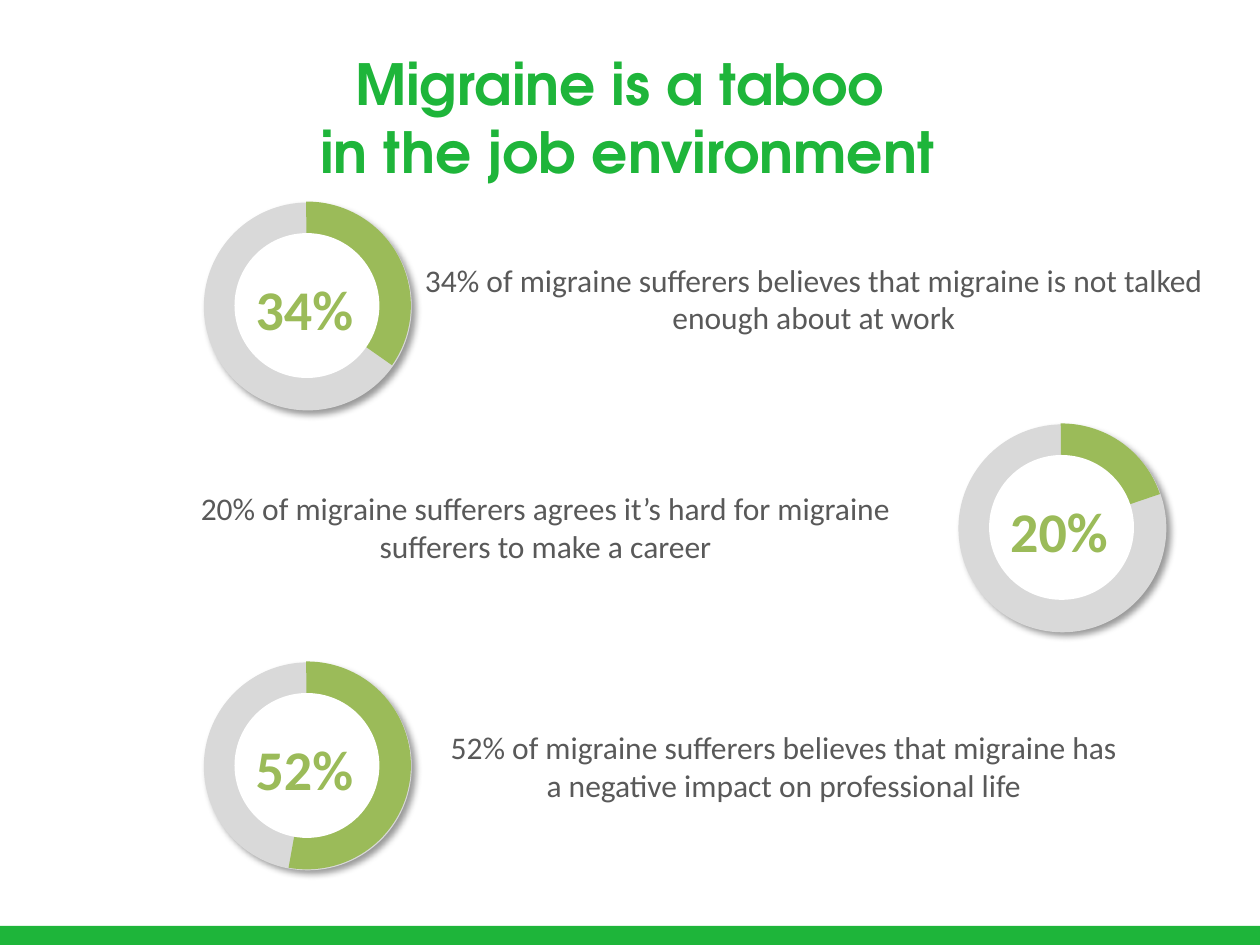
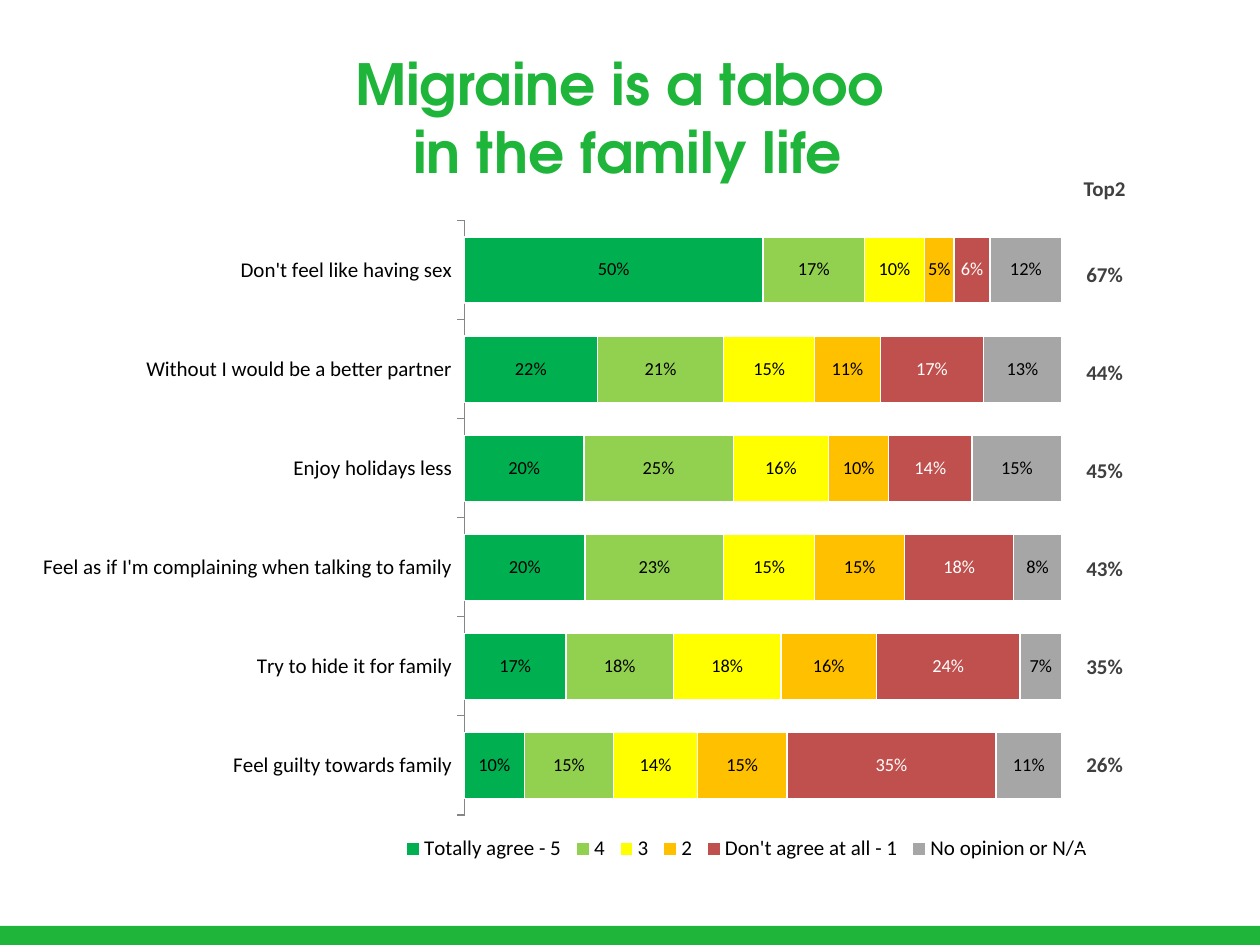
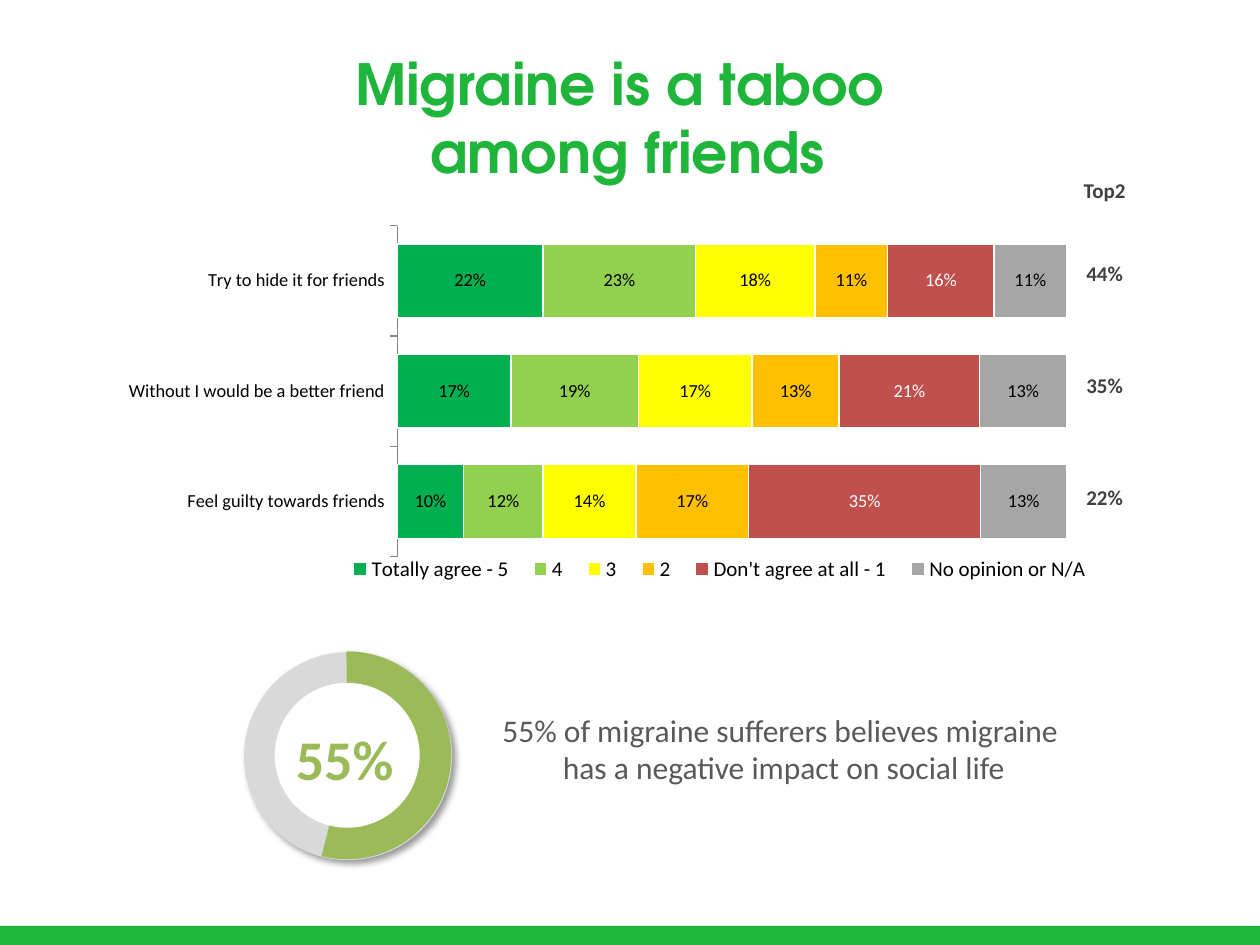
from dataclasses import dataclass

from pptx import Presentation
from pptx.chart import data as cd
from pptx.dml.color import RGBColor
from pptx.enum import chart as ce, shapes as sh, text as tx
from pptx.oxml import ns, parse_xml
from pptx.util import Pt

GREEN = RGBColor(0x1E, 0xB5, 0x3A)
OLIVE = RGBColor(0x9B, 0xBB, 0x59)
SILVER = RGBColor(0xD9, 0xD9, 0xD9)
AXIS = RGBColor(0x86, 0x86, 0x86)
GREY = RGBColor(0x59, 0x59, 0x59)
DARK = RGBColor(0x40, 0x40, 0x40)
BLACK = RGBColor(0, 0, 0)
WHITE = RGBColor(0xFF, 0xFF, 0xFF)

HEAD = "TeX Gyre Adventor"
BODY = "Calibri"
PRESET = sh.MSO_SHAPE
RING = 118.8  # outer diameter
HOLE = 82.8
THICK = 0.17
TOP_ARC = 162.25  # arc end at twelve o'clock

# Answer, bar colour, label colour
SCALE = [
    ("Totally agree - 5", RGBColor(0x00, 0xB0, 0x50), BLACK),
    ("4", RGBColor(0x92, 0xD0, 0x50), BLACK),
    ("3", RGBColor(0xFF, 0xFF, 0x00), BLACK),
    ("2", RGBColor(0xFF, 0xC0, 0x00), BLACK),
    ("Don't agree at all - 1", RGBColor(0xC0, 0x50, 0x4D), WHITE),
    ("No opinion or N/A", RGBColor(0xA6, 0xA6, 0xA6), BLACK),
]
PLOT = (0.42, 0.03, 0.54, 0.88)


@dataclass
class Box:
    left: float
    top: float
    width: float
    height: float

    def emu(self) -> tuple:
        return Pt(self.left), Pt(self.top), Pt(self.width), Pt(self.height)


@dataclass
class Fact:
    """A ring with its share, and the sentence beside it."""
    left: float
    top: float
    share: str
    start: float
    claim: str
    side: float
    line: float


@dataclass
class Survey:
    """Stacked bars; rows maps each question to its percentages."""
    box: Box
    rows: dict
    size: float
    legend: tuple


@dataclass
class Totals:
    """The Top2 column: a heading, then cells of equal height."""
    top: float
    first: float
    pitch: float
    anchor: tx.MSO_ANCHOR
    cells: list


def style(para, size: float, color: RGBColor, bold: bool = False, name: str = BODY) -> None:
    para.alignment = tx.PP_ALIGN.CENTER
    for run in para.runs:
        font = run.font
        font.size, font.bold, font.name = Pt(size), bold, name
        font.color.rgb = color


def write(shapes, box: Box, words: str, size: float, color: RGBColor,
          bold: bool = False, name: str = BODY):
    frame = shapes.add_textbox(*box.emu()).text_frame
    frame.word_wrap = True
    frame.text = words
    style(frame.paragraphs[0], size, color, bold, name)
    return frame


def solid(shapes, kind, box: Box, color: RGBColor, adjust: tuple = ()):
    shape = shapes.add_shape(kind, *box.emu())
    shape.shadow.inherit = False
    shape.fill.solid()
    shape.fill.fore_color.rgb = color
    shape.line.fill.background()
    for i, value in enumerate(adjust):
        shape.adjustments[i] = value
    return shape


def cast(shape) -> None:
    """Give the shape a soft shadow to its lower right."""
    glow = shape._element.spPr.find(ns.qn("a:effectLst"))
    glow.append(parse_xml(
        f'<a:outerShdw {ns.nsdecls("a")} blurRad="{Pt(4)}" dist="{Pt(3)}" dir="2700000" '
        'algn="tl" rotWithShape="0"><a:srgbClr val="000000"><a:alpha val="40000"/>'
        '</a:srgbClr></a:outerShdw>'))


def start(deck, title: str):
    slide = deck.slides.add_slide(deck.slide_layouts[6])
    solid(slide.shapes, PRESET.RECTANGLE, Box(-3, 529, 726, 13), GREEN)
    frame = write(slide.shapes, Box(102, 21.6, 513, 90), title, 32.4, GREEN, True, HEAD)
    frame.vertical_anchor = tx.MSO_ANCHOR.MIDDLE
    return slide


def show(slide, fact: Fact) -> None:
    x, y = fact.left, fact.top
    shapes = slide.shapes.add_group_shape().shapes
    base = solid(shapes, PRESET.DONUT, Box(x + 0.5, y + 0.5, RING, RING), SILVER, (THICK,))
    cast(base)
    arc = solid(shapes, PRESET.BLOCK_ARC, Box(x, y, RING, RING), OLIVE,
                (fact.start, TOP_ARC, THICK))
    for part in (base, arc):
        part._element.spPr.xfrm.set("flipH", "1")
    edge = (RING - HOLE) / 2
    solid(shapes, PRESET.OVAL, Box(x + edge, y + edge, HOLE, HOLE), WHITE)
    frame = write(shapes, Box(x + 22.3, y + 41.6, 71.3, 38), fact.share, 32, OLIVE, True)
    frame.margin_left = frame.margin_right = frame.margin_top = frame.margin_bottom = 0
    write(slide.shapes, Box(fact.side, fact.line, 459.4, 51), fact.claim, 18, GREY)


def layout(spot: tuple, inner: bool = False):
    target = '<c:layoutTarget val="inner"/>' if inner else ""
    modes = "".join(f'<c:{k}Mode val="edge"/>' for k in "xy")
    sizes = "".join(f'<c:{k} val="{v}"/>' for k, v in zip("xywh", spot))
    return parse_xml(f'<c:layout {ns.nsdecls("c")}><c:manualLayout>{target}{modes}{sizes}'
                     '</c:manualLayout></c:layout>')


def plot(slide, survey: Survey) -> None:
    data = cd.CategoryChartData(number_format="0%")
    data.categories = list(survey.rows)
    for (name, _, _), column in zip(SCALE, zip(*survey.rows.values())):
        data.add_series(name, [value / 100 for value in column])
    chart = slide.shapes.add_chart(ce.XL_CHART_TYPE.BAR_STACKED_100,
                                   *survey.box.emu(), data).chart
    chart.font.size, chart.font.name = Pt(18), BODY
    chart.font.color.rgb = BLACK
    chart.has_title = False

    bars = chart.plots[0]
    bars.gap_width, bars.overlap, bars.vary_by_categories = 50, 100, False
    for series, (_, color, ink) in zip(bars.series, SCALE):
        series.format.fill.solid()
        series.format.fill.fore_color.rgb = color
        series.format.line.color.rgb = WHITE
        series.format.line.width = Pt(0.75)
        tags = series.data_labels
        tags.show_value = True
        tags.position = ce.XL_LABEL_POSITION.CENTER
        tags.number_format, tags.number_format_is_linked = "0%", False
        tags.font.size, tags.font.name = Pt(10.5), BODY
        tags.font.color.rgb = ink

    asks = chart.category_axis
    asks.reverse_order = True
    asks.major_tick_mark = ce.XL_TICK_MARK.OUTSIDE
    asks.tick_labels.font.size = Pt(survey.size)
    asks.format.line.color.rgb = AXIS
    scale = chart.value_axis
    scale.visible = scale.has_major_gridlines = False
    scale.minimum_scale, scale.maximum_scale, scale.major_unit = 0, 1, 0.1

    chart.has_legend = True
    legend = chart.legend
    legend.position = ce.XL_LEGEND_POSITION.RIGHT
    legend.include_in_layout = False
    legend.font.size = Pt(12)
    legend._element.find(ns.qn("c:legendPos")).addnext(layout(survey.legend))
    area = chart._chartSpace.chart.plotArea
    for old in area.findall(ns.qn("c:layout")):
        area.remove(old)
    area.insert(0, layout(PLOT, True))


def total(slide, sums: Totals) -> None:
    words = ["Top2", *sums.cells]
    box = Box(615, sums.top, 32.4, sums.first + sums.pitch * len(sums.cells))
    table = slide.shapes.add_table(len(words), 1, *box.emu()).table
    table.first_row = table.horz_banding = False
    for i, word in enumerate(words):
        table.rows[i].height = Pt(sums.pitch if i else sums.first)
        cell = table.cell(i, 0)
        cell.fill.background()
        cell.margin_left = cell.margin_right = cell.margin_top = Pt(0.7)
        cell.margin_bottom = 0
        cell.vertical_anchor = tx.MSO_ANCHOR.TOP if i else sums.anchor
        if word:
            cell.text = word
            style(cell.text_frame.paragraphs[0], 12, DARK, True)


JOB = [
    Fact(116, 115.2, "34%", 86.97, "34% of migraine sufferers believes that migraine is "
         "not talked enough about at work", 235.4, 145.4),
    Fact(547.2, 242, "20%", 119.24, "20% of migraine sufferers agrees it’s hard for migraine "
         "sufferers to make a career", 82, 275.8),
    Fact(116, 378, "52%", 47.89, "52% of migraine sufferers believes that migraine has\v"
         "a negative impact on professional life", 218.2, 412.6),
]
SOCIAL = Fact(139, 372.2, "55%", 45.43, "55% of migraine sufferers believes migraine \v"
              "has a negative impact on social life", 218.2, 402.5)

FAMILY = Survey(Box(0, 114.5, 632, 386), {
    "Don't feel like having sex": (50, 17, 10, 5, 6, 12),
    "Without I would be a better partner": (22, 21, 15, 11, 17, 13),
    "Enjoy holidays less": (20, 25, 16, 10, 14, 15),
    "Feel as if I'm complaining when talking to family": (20, 23, 15, 15, 18, 8),
    "Try to hide it for family": (17, 18, 18, 16, 24, 7),
    "Feel guilty towards family": (10, 15, 14, 15, 35, 11),
}, 12, (0.36, 0.94, 0.63, 0.04))
FRIENDS = Survey(Box(-70.5, 122.5, 708.5, 215), {
    "Try to hide it for friends": (22, 23, 18, 11, 16, 11),
    "Without I would be a better friend": (17, 19, 17, 13, 21, 13),
    "Feel guilty towards friends": (10, 12, 14, 17, 35, 13),
}, 10.5, (0.37, 0.91, 0.62, 0.08))

KIN = Totals(66.2, 83, 56, tx.MSO_ANCHOR.MIDDLE, ["67%", "44%", "45%", "43%", "35%", "26%"])
PALS = Totals(71.3, 45.4, 32, tx.MSO_ANCHOR.BOTTOM, ["", "44%", "", "35%", "", "22%"])


def main() -> None:
    deck = Presentation()
    deck.slide_width, deck.slide_height = Pt(720), Pt(540)

    slide = start(deck, "Migraine is a taboo \vin the job environment")
    for fact in JOB:
        show(slide, fact)

    slide = start(deck, "Migraine is a taboo \vin the family life")
    plot(slide, FAMILY)
    total(slide, KIN)

    slide = start(deck, "Migraine is a taboo \vamong friends")
    plot(slide, FRIENDS)
    total(slide, PALS)
    show(slide, SOCIAL)

    deck.save("out.pptx")


if __name__ == "__main__":
    main()
